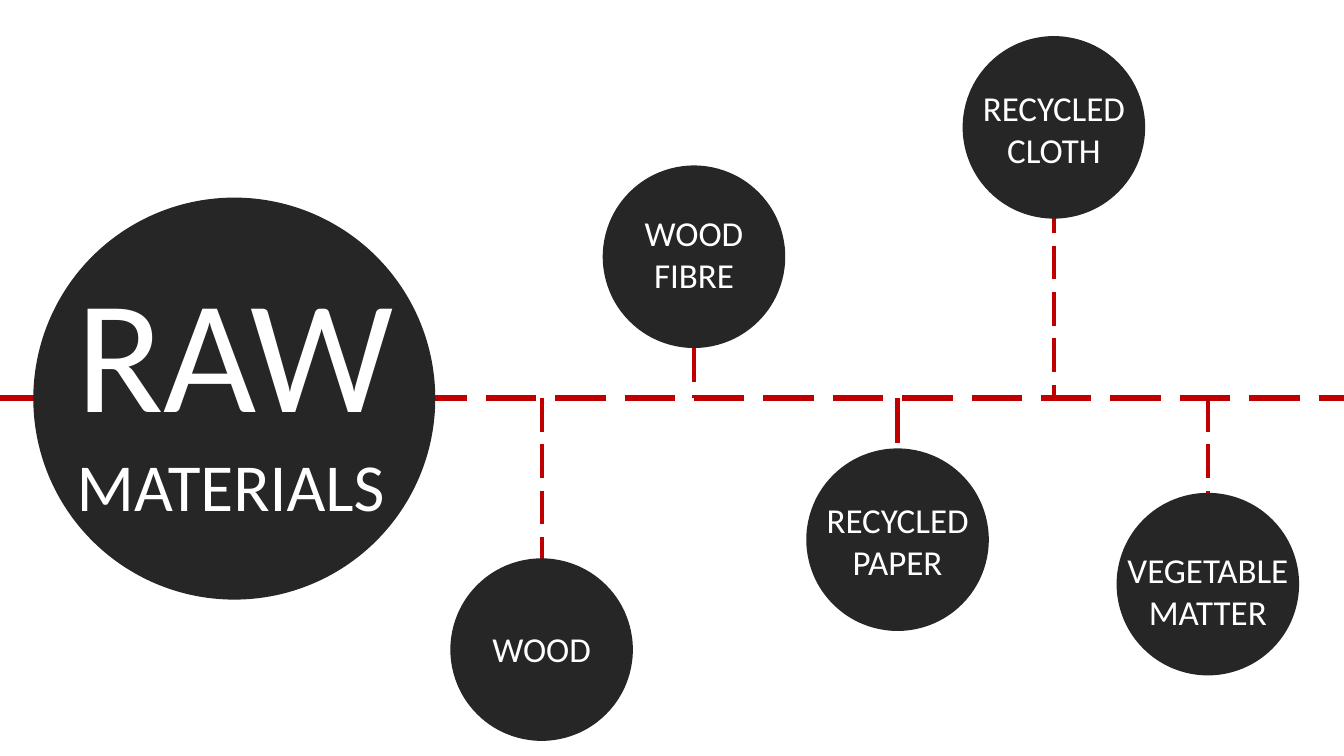
from dataclasses import dataclass

from lxml.etree import SubElement
from pptx import Presentation
from pptx.dml.color import RGBColor
from pptx.enum.dml import MSO_LINE_DASH_STYLE as Dash
from pptx.enum.shapes import MSO_CONNECTOR as Connector, MSO_SHAPE as Shape
from pptx.enum.text import MSO_ANCHOR as Anchor, MSO_AUTO_SIZE as AutoSize, PP_ALIGN as Align
from pptx.oxml.ns import qn
from pptx.util import Cm, Pt


@dataclass(frozen=True)
class Theme:
    font: str = "Calibri"
    disc: RGBColor = RGBColor(0x26, 0x26, 0x26)
    line: RGBColor = RGBColor(0xC0, 0x00, 0x00)
    text: RGBColor = RGBColor(0xFF, 0xFF, 0xFF)
    hero_size: float = 115
    subtitle_size: float = 48
    label_size: float = 25
    axis_width: float = 4.5


@dataclass(frozen=True)
class Material:
    """A disc hung on the axis; lengths in centimetres."""
    lines: tuple
    left: float
    top: float
    label_drop: float
    stem_length: float
    stem_width: float = 3


THEME = Theme()
SLIDE_WIDTH, SLIDE_HEIGHT = 33.87, 19.05
AXIS_Y = 10.03
DISC_SIZE = 4.6
LABEL_HEIGHT = 2.4
HUB_BOX = (0.84, 4.98, 10.13, 10.13)
MATERIALS = (
    Material(("WOOD",), 11.35, 14.07, 1.63, 6.17),
    Material(("WOOD", "FIBRE"), 15.19, 4.17, 1.04, 3.58),
    Material(("RECYCLED PAPER",), 20.32, 11.3, 1.14, 3.38, 4),
    Material(("RECYCLED CLOTH",), 24.26, 0.91, 1.14, 6.17),
    Material(("VEGETABLE MATTER",), 28.14, 12.42, 1.27, 6.17),
)


def apply_format(target, values):
    for name, value in values.items():
        setattr(target, name, value)


def format_run(run, size):
    apply_format(run.font, {"name": THEME.font, "size": Pt(size)})
    run.font.color.rgb = THEME.text


def add_dashed_line(slide, x1, y1, x2, y2, width):
    line = slide.shapes.add_connector(Connector.STRAIGHT, Cm(x1), Cm(y1), Cm(x2), Cm(y2))
    line.line.color.rgb = THEME.line
    apply_format(line.line, {"width": Pt(width), "dash_style": Dash.LONG_DASH})
    SubElement(line.element.spPr, qn("a:effectLst"))


def add_disc(slide, left, top, width, height):
    disc = slide.shapes.add_shape(Shape.OVAL, Cm(left), Cm(top), Cm(width), Cm(height))
    disc.shadow.inherit = False
    disc.fill.solid()
    disc.fill.fore_color.rgb = THEME.disc
    disc.line.fill.background()


def add_hub(slide, box):
    """Place the large disc with the slide title on it."""
    left, top, width, height = box
    add_disc(slide, *box)
    title = slide.shapes.title
    apply_format(title, {"left": Cm(left + 0.84), "top": Cm(top + 1.22),
                         "width": Cm(width - 0.15), "height": Cm(height - 2.69)})
    apply_format(title.text_frame, {"word_wrap": True, "auto_size": AutoSize.NONE,
                                    "vertical_anchor": Anchor.TOP})
    paragraph = title.text_frame.paragraphs[0]
    paragraph.alignment = Align.LEFT
    for text, size in (("RAW", THEME.hero_size), (" MATERIALS", THEME.subtitle_size)):
        run = paragraph.add_run()
        run.text = text
        format_run(run, size)
    slide.shapes.element.append(title.element)  # bring the title in front of its disc


def add_material(slide, material):
    """Place a stem on the axis, its disc and the label."""
    center_x = material.left + DISC_SIZE / 2
    if material.top < AXIS_Y:
        start, end = AXIS_Y - material.stem_length, AXIS_Y
    else:
        start, end = AXIS_Y, AXIS_Y + material.stem_length
    add_dashed_line(slide, center_x, start, center_x, end, material.stem_width)
    add_disc(slide, material.left, material.top, DISC_SIZE, DISC_SIZE)

    label = slide.shapes.add_textbox(Cm(material.left), Cm(material.top + material.label_drop),
                                     Cm(DISC_SIZE), Cm(LABEL_HEIGHT))
    frame = label.text_frame
    frame.word_wrap = True
    frame.text = "\n".join(material.lines)
    for paragraph in frame.paragraphs:
        paragraph.alignment = Align.CENTER
        format_run(paragraph.runs[0], THEME.label_size)


def build_materials_slide(presentation):
    slide = presentation.slides.add_slide(presentation.slide_layouts[5])
    add_dashed_line(slide, 0, AXIS_Y, SLIDE_WIDTH, AXIS_Y, THEME.axis_width)
    add_hub(slide, HUB_BOX)
    for material in MATERIALS:
        add_material(slide, material)


def main():
    presentation = Presentation()
    apply_format(presentation, {"slide_width": Cm(SLIDE_WIDTH), "slide_height": Cm(SLIDE_HEIGHT)})
    build_materials_slide(presentation)
    presentation.save("out.pptx")


if __name__ == "__main__":
    main()
